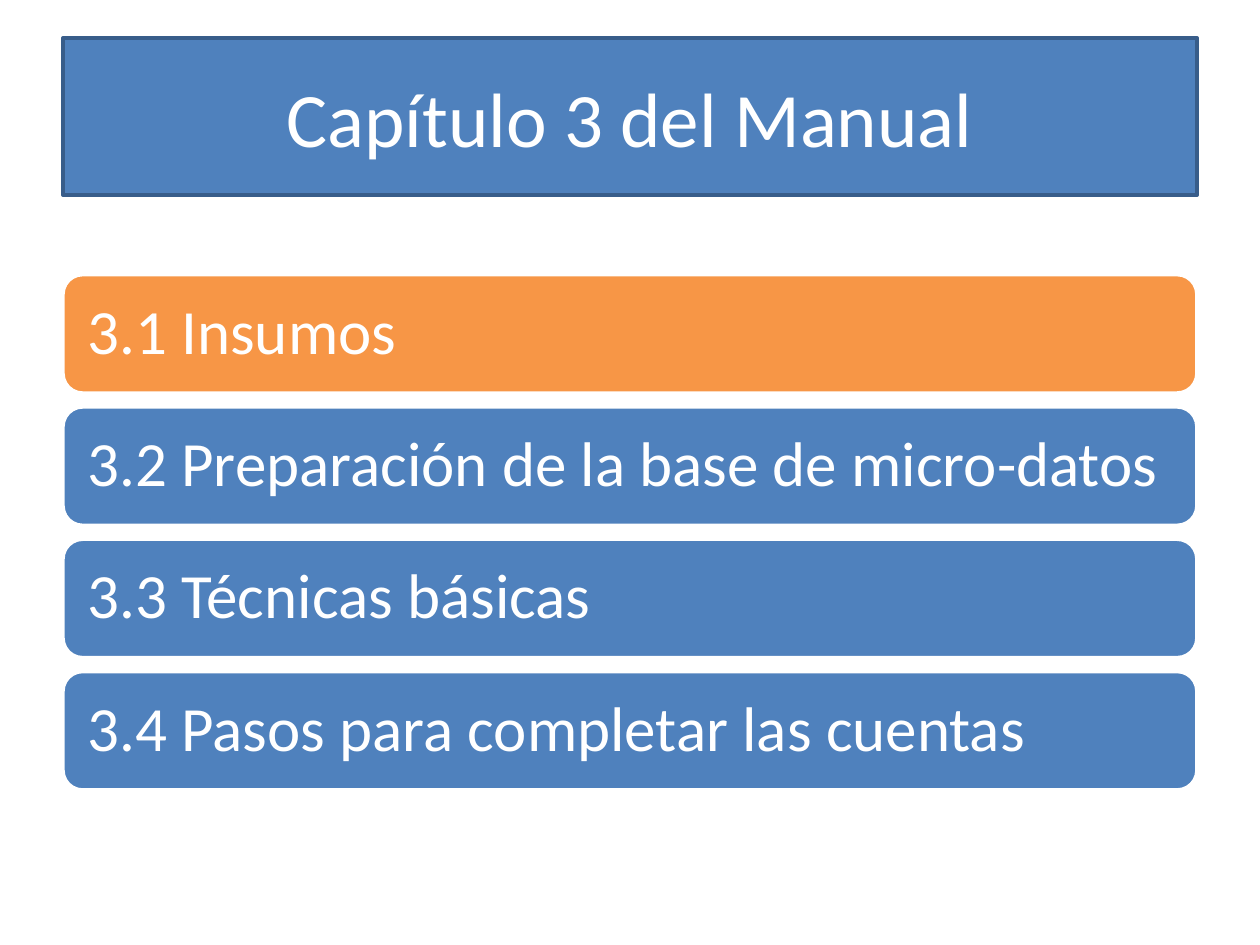
"""Build the chapter 3 overview slide with its first section highlighted."""
import pptx
import pptx.dml.color
import pptx.enum.shapes
import pptx.enum.text
import pptx.util
from pptx.util import Inches

COLORS = {"blue": "4F81BD", "border": "385D8A", "orange": "F79646", "white": "FFFFFF"}
SECTIONS = [
    "3.1 Insumos",
    "3.2 Preparación de la base de micro-datos",
    "3.3 Técnicas básicas",
    "3.4 Pasos para completar las cuentas",
]
CURRENT_SECTION = 0
LEFT, WIDTH = 0.5, 9
BAR_TOP, BAR_HEIGHT, BAR_GAP = 2.18, 0.94, 0.11


class ChapterSlide:
    """Hold the slide style and draw its elements."""

    font = "Calibri"
    line_width = 2

    def __init__(self, deck):
        self.slide = deck.slides.add_slide(deck.slide_layouts[5])

    def color(self, name):
        return pptx.dml.color.RGBColor.from_string(COLORS[name])

    def paint(self, shape, fill, line):
        shape.fill.solid()
        shape.fill.fore_color.rgb = self.color(fill)
        shape.line.color.rgb = self.color(line)
        shape.line.width = pptx.util.Pt(self.line_width)

    def add_label(self, shape, text, size, alignment):
        frame = shape.text_frame
        frame.word_wrap = True
        frame.vertical_anchor = pptx.enum.text.MSO_ANCHOR.MIDDLE
        para = frame.paragraphs[0]
        para.alignment = alignment
        span = para.add_run()
        span.text = text
        span.font.name = self.font
        span.font.size = pptx.util.Pt(size)
        span.font.color.rgb = self.color("white")
        return para

    def title(self, text, top, height):
        box = self.slide.shapes.title
        box.left, box.top = Inches(LEFT), Inches(top)
        box.width, box.height = Inches(WIDTH), Inches(height)
        self.paint(box, "blue", "border")
        self.add_label(box, text, 44, pptx.enum.text.PP_ALIGN.CENTER)

    def section_bar(self, text, top, fill):
        bar = self.slide.shapes.add_shape(
            pptx.enum.shapes.MSO_SHAPE.ROUNDED_RECTANGLE,
            Inches(LEFT), Inches(top), Inches(WIDTH), Inches(BAR_HEIGHT),
        )
        bar.shadow.inherit = False
        self.paint(bar, fill, "white")
        frame = bar.text_frame
        frame.margin_left = frame.margin_right = Inches(0.15)
        para = self.add_label(bar, text, 36, pptx.enum.text.PP_ALIGN.LEFT)
        para.line_spacing = 0.9


def main():
    deck = pptx.Presentation()
    deck.slide_width, deck.slide_height = Inches(10), Inches(7.5)
    page = ChapterSlide(deck)
    page.title("Capítulo 3 del Manual", 0.3, 1.25)
    for index, section in enumerate(SECTIONS):
        fill = "orange" if index == CURRENT_SECTION else "blue"
        page.section_bar(section, BAR_TOP + index * (BAR_HEIGHT + BAR_GAP), fill)
    deck.save("out.pptx")


if __name__ == "__main__":
    main()
